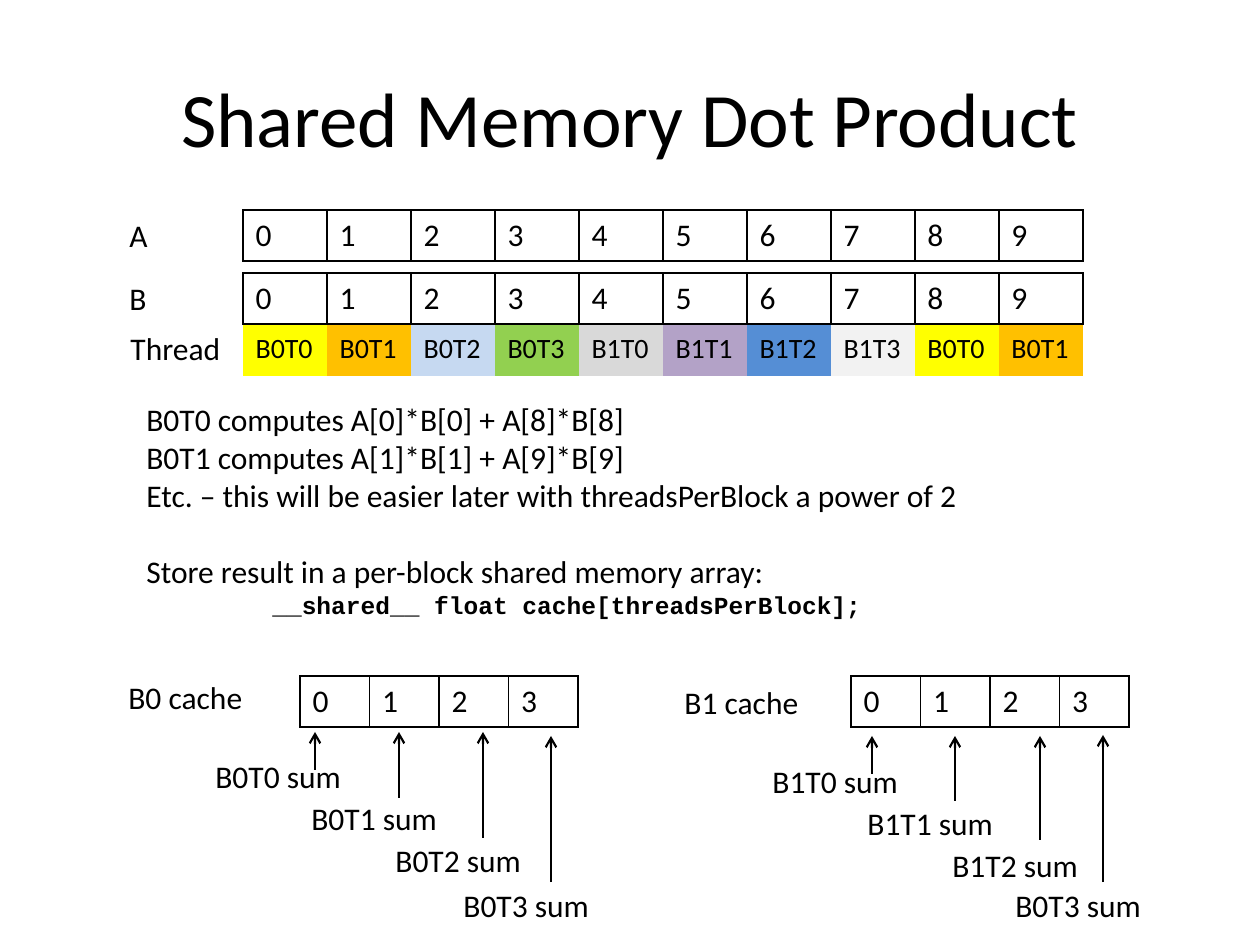
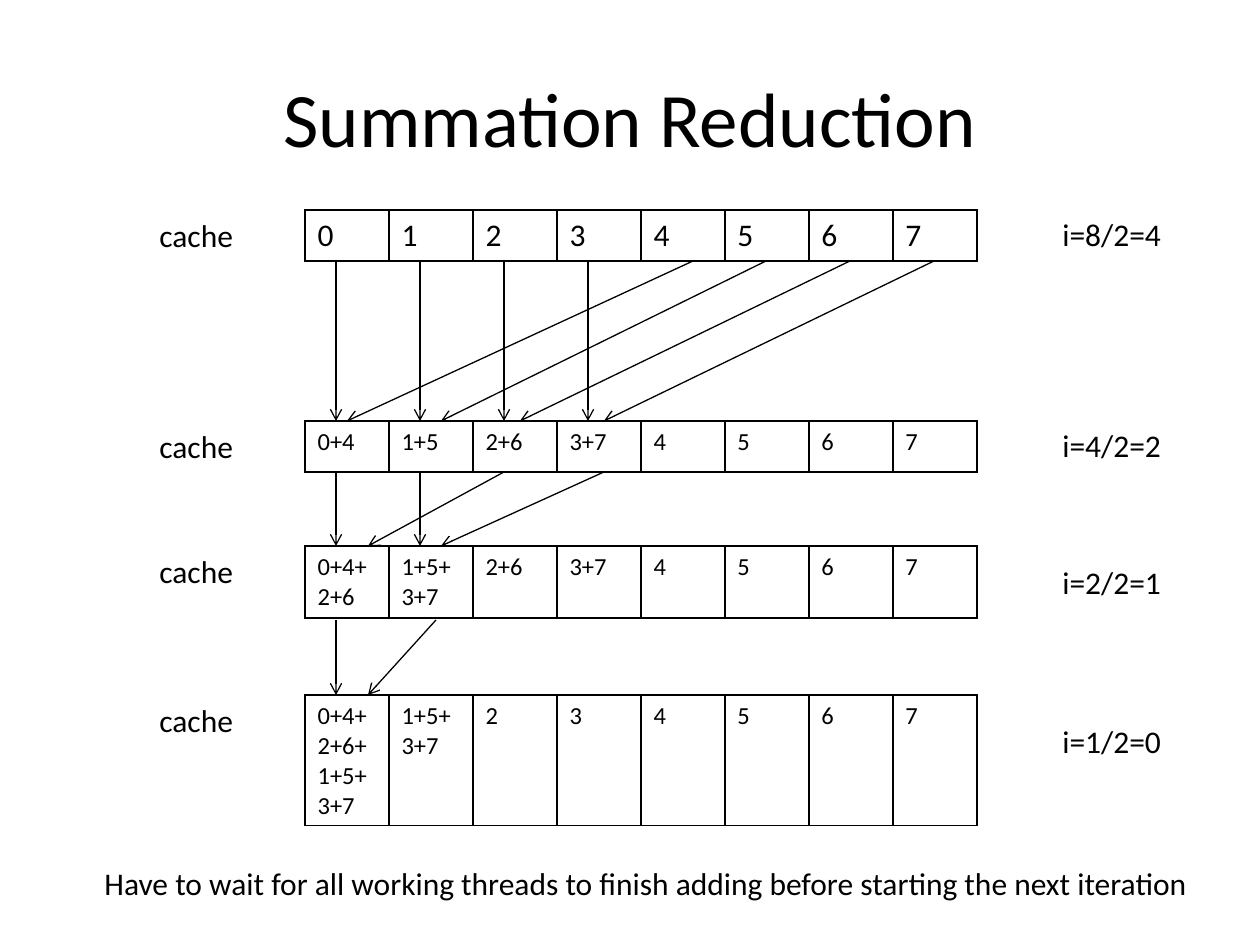
"""Build two slides on a shared memory dot product and its summation reduction."""
from dataclasses import dataclass

import pptx
import pptx.dml.color
import pptx.enum.shapes
import pptx.enum.text
import pptx.oxml.ns
import pptx.oxml.xmlchemy
import pptx.presentation
import pptx.shapes.connector
import pptx.slide
import pptx.text.text
import pptx.util
from lxml import etree

PX_PER_INCH = 126
CELL_WIDTH = 84
ROW_HEIGHT = 51


@dataclass(frozen=True)
class Theme:
    font: str = "Calibri"
    code_font: str = "Courier New"
    ink: str = "000000"
    paper: str = "FFFFFF"
    title_size: int = 44
    body_size: int = 18
    thread_size: int = 16
    small_size: int = 14
    cell_border: float = 1
    sum_line: float = 1.25
    step_line: float = 0.75
    thread_colors: tuple[str, ...] = (
        "FFFF00", "FFC000", "C6D9F1", "92D050",
        "D9D9D9", "B3A2C7", "558ED5", "F2F2F2",
    )


THEME = Theme()


@dataclass(frozen=True)
class Label:
    text: str
    left: int
    top: int
    width: int


@dataclass(frozen=True)
class CellRow:
    values: list[str]
    left: int
    top: int
    width: int
    height: int = ROW_HEIGHT
    size: int = THEME.body_size
    fills: tuple[str, ...] = (THEME.paper,)
    bordered: bool = True


@dataclass(frozen=True)
class ThreadSum:
    thread: str
    x: int
    head: int
    tail: int
    label_top: int
    label_shift: int = 100


@dataclass(frozen=True)
class BlockCache:
    label: Label
    cells: CellRow
    sums: tuple[ThreadSum, ...]


@dataclass(frozen=True)
class ReductionStep:
    values: list[str]
    top: int
    height: int
    size: int
    iteration: str
    iteration_top: int
    arrows_top: int = 0
    arrows_bottom: int = 0
    partners: tuple[tuple[int, int], ...] = ()


def digits(count: int) -> list[str]:
    """Return the indexes below count as text."""
    return [str(index) for index in range(count)]


CACHES = (
    BlockCache(
        Label("B0 cache", 116, 672, 144),
        CellRow(digits(4), 300, 676, 278),
        (
            ThreadSum("B0T0", 315, 732, 770, 751, 112),
            ThreadSum("B0T1", 399, 732, 798, 793),
            ThreadSum("B0T2", 483, 732, 838, 835),
            ThreadSum("B0T3", 551, 736, 882, 880),
        ),
    ),
    BlockCache(
        Label("B1 cache", 672, 677, 144),
        CellRow(digits(4), 851, 676, 278),
        (
            ThreadSum("B1T0", 872, 736, 774, 756, 112),
            ThreadSum("B1T1", 955, 736, 801, 798),
            ThreadSum("B1T2", 1040, 736, 840, 840),
            ThreadSum("B0T3", 1103, 735, 882, 880),
        ),
    ),
)

STEPS = (
    ReductionStep(
        digits(8), 210, ROW_HEIGHT, THEME.body_size, "i=8/2=4", 209, 261, 421,
        ((693, 347), (766, 441), (850, 520), (934, 604)),
    ),
    ReductionStep(
        ["0+4", "1+5", "2+6", "3+7", "4", "5", "6", "7"],
        421, ROW_HEIGHT, THEME.small_size, "i=4/2=2", 420, 472, 546,
        ((504, 368), (604, 441)),
    ),
    ReductionStep(
        ["0+4+2+6", "1+5+3+7", "2+6", "3+7", "4", "5", "6", "7"],
        546, 72, THEME.small_size, "i=2/2=1", 557, 620, 695,
        ((436, 368),),
    ),
    ReductionStep(
        ["0+4+2+6+1+5+3+7", "1+5+3+7", "2", "3", "4", "5", "6", "7"],
        695, 130, THEME.small_size, "i=1/2=0", 716,
    ),
)


def px(length: float) -> pptx.util.Emu:
    """Turn pixels into EMU."""
    return pptx.util.Emu(round(length * 914400 / PX_PER_INCH))


def rgb(color: str) -> pptx.dml.color.RGBColor:
    """Turn a hex string into a colour."""
    return pptx.dml.color.RGBColor.from_string(color)


def style(paragraph: pptx.text.text._Paragraph, size: int,
          font: str = THEME.font, bold: bool = False) -> None:
    """Set the font of a whole paragraph."""
    paragraph.font.name = font
    paragraph.font.size = pptx.util.Pt(size)
    paragraph.font.bold = bold
    paragraph.font.color.rgb = rgb(THEME.ink)


def add_titled_slide(deck: pptx.presentation.Presentation, text: str) -> pptx.slide.Slide:
    """Add a title-only slide."""
    slide = deck.slides.add_slide(deck.slide_layouts[5])
    title = slide.shapes.title
    title.left, title.top, title.width, title.height = px(63), px(38), px(1134), px(158)
    title.text_frame.text = text
    title.text_frame.vertical_anchor = pptx.enum.text.MSO_ANCHOR.MIDDLE
    heading = title.text_frame.paragraphs[0]
    heading.alignment = pptx.enum.text.PP_ALIGN.CENTER
    style(heading, THEME.title_size)
    return slide


def add_text(slide: pptx.slide.Slide, label: Label,
             height: int = 50) -> list[pptx.text.text._Paragraph]:
    """Add a text box and return its paragraphs."""
    frame = slide.shapes.add_textbox(
        px(label.left), px(label.top), px(label.width), px(height)).text_frame
    frame.word_wrap = True
    frame.text = label.text
    for paragraph in frame.paragraphs:
        style(paragraph, THEME.body_size)
    return list(frame.paragraphs)


def set_borders(cell_properties: etree._Element, visible: bool) -> None:
    """Draw or suppress all four borders of a cell."""
    qn = pptx.oxml.ns.qn
    for side in ("a:lnL", "a:lnR", "a:lnT", "a:lnB"):
        border = etree.SubElement(cell_properties, qn(side))
        if visible:
            border.set("w", str(pptx.util.Pt(THEME.cell_border)))
            fill = etree.SubElement(border, qn("a:solidFill"))
            etree.SubElement(fill, qn("a:srgbClr"), val=THEME.ink)
        else:
            etree.SubElement(border, qn("a:noFill"))


def add_cells(slide: pptx.slide.Slide, row: CellRow) -> None:
    """Add a one-row table of equal cells."""
    count = len(row.values)
    table = slide.shapes.add_table(
        1, count, px(row.left), px(row.top), px(row.width), px(row.height)).table
    table.first_row = False
    table.horz_banding = False
    for index, value in enumerate(row.values):
        table.columns[index].width = px(row.width / count)
        cell = table.cell(0, index)
        cell.text = value
        style(cell.text_frame.paragraphs[0], row.size)
        set_borders(cell._tc.get_or_add_tcPr(), row.bordered)
        cell.fill.solid()
        cell.fill.fore_color.rgb = rgb(row.fills[index % len(row.fills)])


def add_arrow(slide: pptx.slide.Slide, start: tuple[int, int],
              end: tuple[int, int], weight: float) -> None:
    """Add a straight line with an open arrowhead at its end."""
    arrow = slide.shapes.add_connector(
        pptx.enum.shapes.MSO_CONNECTOR.STRAIGHT, *map(px, start + end))
    arrow.line.color.rgb = rgb(THEME.ink)
    arrow.line.width = pptx.util.Pt(weight)
    qn = pptx.oxml.ns.qn
    etree.SubElement(arrow.line._get_or_add_ln(), qn("a:tailEnd"), type="arrow")
    etree.SubElement(arrow._element.spPr, qn("a:effectLst"))


def add_explanation(slide: pptx.slide.Slide) -> None:
    """Add the account of what each thread computes and stores."""
    lines = (
        "B0T0 computes A[0]*B[0] + A[8]*B[8]",
        "B0T1 computes A[1]*B[1] + A[9]*B[9]",
        "Etc. – this will be easier later with threadsPerBlock a power of 2",
        "Store result in a per-block shared memory array:",
        "__shared__ float cache[threadsPerBlock];",
    )
    *_, storage, declaration = add_text(slide, Label("\n".join(lines), 134, 394, 860), 233)
    storage.space_before = pptx.util.Pt(22)
    style(declaration, THEME.small_size, THEME.code_font, bold=True)
    declaration._p.get_or_add_pPr().set("marL", str(px(126)))


def build_dot_product(deck: pptx.presentation.Presentation) -> None:
    """Build the slide on the dot product in shared memory."""
    slide = add_titled_slide(deck, "Shared Memory Dot Product")
    vector_left, vector_width = 243, 10 * CELL_WIDTH
    for name, top in (("A", 210), ("B", 273)):
        add_text(slide, Label(name, 117, top, 44))
        add_cells(slide, CellRow(digits(10), vector_left, top, vector_width))

    block_threads = [f"B{block}T{thread}" for block in range(2) for thread in range(4)]
    add_text(slide, Label("Thread", 118, 323, 118))
    add_cells(slide, CellRow(
        block_threads + block_threads[:2], vector_left, 325, vector_width,
        size=THEME.thread_size, fills=THEME.thread_colors, bordered=False))
    add_explanation(slide)

    for cache in CACHES:
        add_text(slide, cache.label)
        add_cells(slide, cache.cells)
        for part in cache.sums:
            add_text(slide, Label(
                f"{part.thread} sum", part.x - part.label_shift, part.label_top, 156))
            add_arrow(slide, (part.x, part.tail), (part.x, part.head), THEME.sum_line)


def build_reduction(deck: pptx.presentation.Presentation) -> None:
    """Build the slide on halving the cache until one sum is left."""
    slide = add_titled_slide(deck, "Summation Reduction")
    for step in STEPS:
        add_text(slide, Label("cache", 147, step.top, 102))
        add_cells(slide, CellRow(
            step.values, 305, step.top, 8 * CELL_WIDTH, step.height, step.size))
        add_text(slide, Label(step.iteration, 1050, step.iteration_top, 136))
        for index, (partner_x, target_x) in enumerate(step.partners):
            own_x = 336 + index * CELL_WIDTH
            for start_x, end_x in ((own_x, own_x), (partner_x, target_x)):
                add_arrow(slide, (start_x, step.arrows_top),
                          (end_x, step.arrows_bottom), THEME.step_line)
    add_text(slide, Label(
        "Have to wait for all working threads to finish adding "
        "before starting the next iteration", 92, 858, 1150))


def main() -> None:
    """Build and save the deck."""
    deck = pptx.Presentation()
    deck.slide_width, deck.slide_height = px(1260), px(945)
    build_dot_product(deck)
    build_reduction(deck)
    deck.save("out.pptx")


if __name__ == "__main__":
    main()
